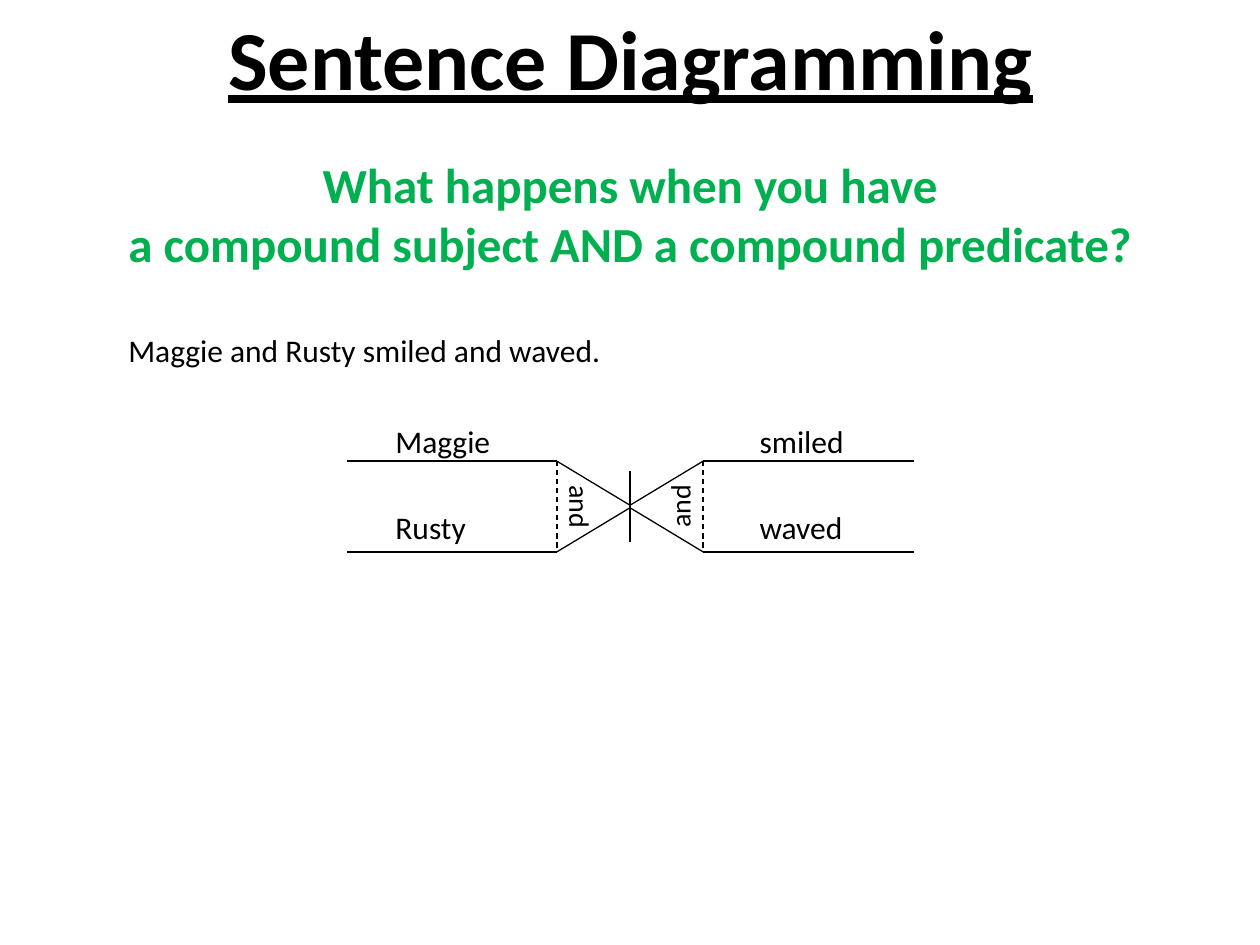
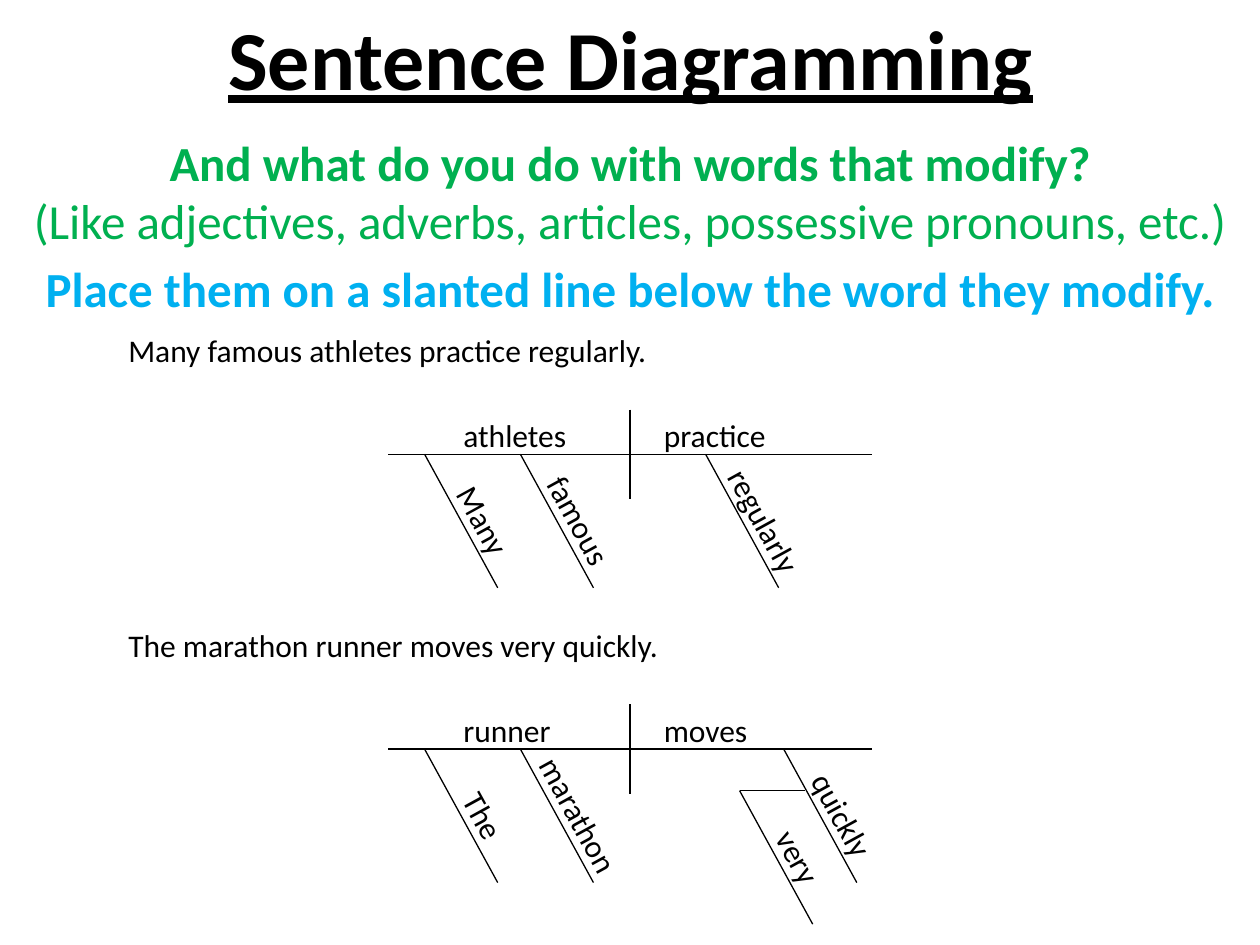
from lxml import etree
from pptx import Presentation
from pptx.dml.color import RGBColor
from pptx.enum.dml import MSO_LINE
from pptx.enum.shapes import MSO_CONNECTOR
from pptx.enum.text import MSO_AUTO_SIZE, PP_ALIGN
from pptx.oxml.ns import qn
from pptx.util import Inches, Pt

STRAIGHT = MSO_CONNECTOR.STRAIGHT
DASH = MSO_LINE.DASH
GROW = MSO_AUTO_SIZE.SHAPE_TO_FIT_TEXT
LEFT, CENTER = PP_ALIGN.LEFT, PP_ALIGN.CENTER

BLACK, GREEN, BLUE = "000000", "00B050", "00B0F0"
TITLE = {"size": Pt(48), "bold": True, "underline": True}
HEADING = {"size": Pt(28), "bold": True}
SUBHEADING = {"size": Pt(28), "bold": False}
WORD = {"size": Pt(18)}
CONJUNCTION = {"size": Pt(16)}

WORD_HEIGHT = 0.4
SLANT_RUN, SLANT_DROP, SLANT_ANGLE = 0.58, 1.06, 61.2
SLANT_WORD_X, SLANT_WORD_Y = 0.47, 0.53


def set_color(color_format, hex_color):
    color_format.rgb = RGBColor.from_string(hex_color)


def add_text(slide, box, lines, color=BLACK, align=LEFT, wrap=False, rotation=0):
    shape = slide.shapes.add_textbox(*map(Inches, box))
    shape.rotation = rotation
    frame = shape.text_frame
    frame.word_wrap = wrap
    frame.auto_size = GROW
    for index, (text, style) in enumerate(lines):
        paragraph = frame.add_paragraph() if index else frame.paragraphs[0]
        paragraph.alignment = align
        run = paragraph.add_run()
        run.text = text
        for name, value in {"name": "Calibri", **style}.items():
            setattr(run.font, name, value)
        set_color(run.font.color, color)


def add_line(slide, start, end, dash=None):
    line = slide.shapes.add_connector(STRAIGHT, *map(Inches, (*start, *end)))
    line.line.width = Pt(0.75)
    set_color(line.line.color, BLACK)
    if dash:
        line.line.dash_style = dash
    etree.SubElement(line._element.spPr, qn("a:effectLst"))


def add_word(slide, left, top, width, text):
    add_text(slide, (left, top, width, WORD_HEIGHT), [(text, WORD)])


def add_title(slide):
    add_text(slide, (1.68, 0, 6.65, 0.91), [("Sentence Diagramming", TITLE)], align=CENTER)


def add_heading(slide, box, lines, color=GREEN):
    add_text(slide, box, lines, color, CENTER, True)


def add_compound_diagram(slide, box, subjects, predicates):
    left, top, width, height = box
    center, middle = left + width / 2, top + height / 2
    sides = ((-1, left, 0.29, 90, subjects), (1, left + width, 3.18, 270, predicates))
    for side, outer, word_offset, rotation, words in sides:
        inner = center + side * 0.58
        for row, (text, word_width) in enumerate(words):
            row_y = top + row * height
            add_line(slide, (center, middle + (row * 2 - 1) * 0.01), (inner, row_y))
            add_line(slide, (inner, row_y), (outer, row_y))
            add_word(slide, left + word_offset, top - 0.36 + row * 0.68, word_width, text)
        add_line(slide, (inner, top), (inner, top + height), DASH)
        add_text(slide, (center + side * 0.395 - 0.275, middle - 0.185, 0.55, 0.37),
                 [("and", CONJUNCTION)], align=CENTER, rotation=rotation)
    add_line(slide, (center, middle - 0.28), (center, middle + 0.28))


def add_modifier(slide, x, y, text, width):
    add_line(slide, (x, y), (x + SLANT_RUN, y + SLANT_DROP))
    box = (x + SLANT_WORD_X - width / 2, y + SLANT_WORD_Y - WORD_HEIGHT / 2, width, WORD_HEIGHT)
    add_text(slide, box, [(text, WORD)], rotation=SLANT_ANGLE)


def add_modifier_diagram(slide, box, subject, verb, modifiers):
    left, top, width, height = box
    center, base = left + width / 2, top + height / 2
    add_line(slide, (left, base), (left + width, base))
    add_line(slide, (center, top), (center, top + height))
    for offset, (text, word_width) in ((0.5, subject), (2.09, verb)):
        add_word(slide, left + offset, top, word_width, text)
    for offset, drop, text, word_width in modifiers:
        x, y = left + offset, base + drop
        add_modifier(slide, x, y, text, word_width)
        if drop:
            add_line(slide, (x, y), (x + 0.52, y))


def build_compound_slide(slide):
    add_heading(slide, (0.75, 1.18, 8.5, 1.04), [
        ("What happens when you have", HEADING),
        ("a compound subject AND a compound predicate?", HEADING),
    ])
    add_word(slide, 0.92, 2.58, 3.99, "Maggie and Rusty smiled and waved.")
    add_compound_diagram(slide, (2.75, 3.66, 4.5, 0.72),
                         (("Maggie", 0.96), ("Rusty", 0.77)),
                         (("smiled", 0.88), ("waved", 0.87)))
    add_title(slide)


def build_modifier_slide(slide):
    add_heading(slide, (0, 1, 10, 1.04), [
        ("And what do you do with words that modify?", HEADING),
        ("(Like adjectives, adverbs, articles, possessive pronouns, etc.)", SUBHEADING),
    ])
    add_heading(slide, (0, 2, 10, 0.57),
                [("Place them on a slanted line below the word they modify.", HEADING)], BLUE)
    examples = (
        (2.58, "Many famous athletes practice regularly.", 4.36,
         ("athletes", 1.03), ("practice", 1.02),
         ((0.29, 0, "Many", 0.78), (1.05, 0, "famous", 0.96), (2.52, 0, "regularly", 1.1))),
        (4.92, "The marathon runner moves very quickly.", 4.46,
         ("runner", 0.9), ("moves", 0.87),
         ((0.29, 0, "The", 0.58), (1.05, 0, "marathon", 1.21),
          (2.79, 0.33, "very", 0.64), (3.14, 0, "quickly", 0.92))),
    )
    for top, sentence, width, subject, verb, modifiers in examples:
        add_word(slide, 0.92, top, width, sentence)
        add_modifier_diagram(slide, (3.08, top + 0.67, 3.84, 0.71), subject, verb, modifiers)
    add_title(slide)


def main():
    presentation = Presentation()
    presentation.slide_width, presentation.slide_height = Inches(10), Inches(7.5)
    for build_slide in (build_compound_slide, build_modifier_slide):
        build_slide(presentation.slides.add_slide(presentation.slide_layouts[6]))
    presentation.save("out.pptx")


if __name__ == "__main__":
    main()
